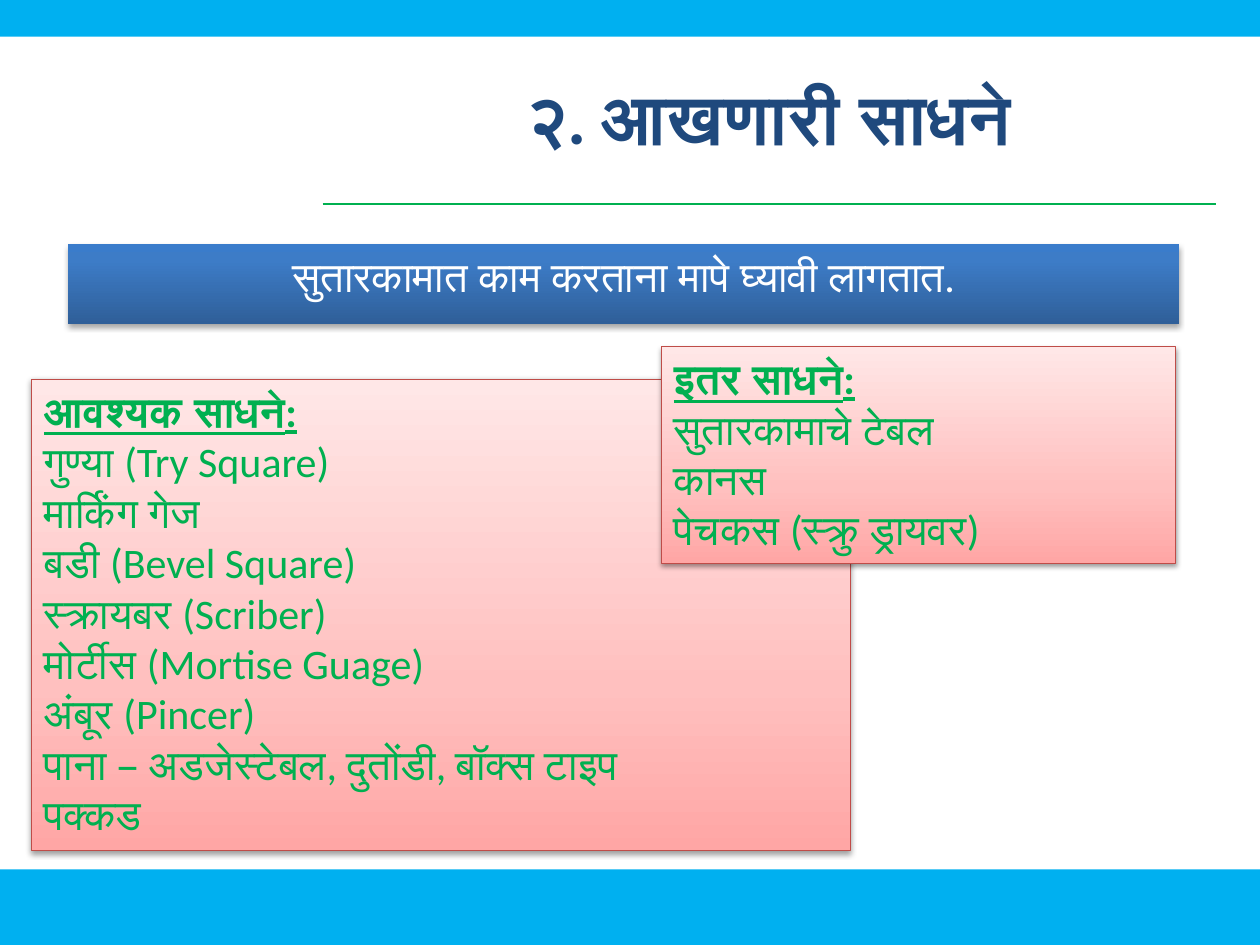
from dataclasses import dataclass

from lxml import etree
from pptx import Presentation
from pptx import util as u
from pptx.dml.color import RGBColor
from pptx.enum import shapes, text
from pptx.oxml import parse_xml
from pptx.oxml.ns import nsdecls, qn


@dataclass(frozen=True)
class Theme:
    font: str = "Calibri"
    title_size: int = 40
    body_size: int = 24
    band: str = "00B0F0"
    green: str = "00B050"
    title: str = "1F497D"
    white: str = "FFFFFF"
    panel_edge: str = "BF4C48"
    blue_stops: tuple = ((0, "2F5F99"), (80, "3D7CC7"), (100, "3A7CCB"))
    pink_stops: tuple = ((0, "FFA6A5"), (35, "FFC0BF"), (100, "FFE7E7"))


@dataclass(frozen=True)
class Box:
    left: float
    top: float
    width: float
    height: float

    def lengths(self) -> list:
        return [u.Inches(v) for v in (self.left, self.top, self.width, self.height)]


@dataclass(frozen=True)
class ToolPanel:
    box: Box
    heading: str
    tools: tuple


THEME = Theme()
BANDS = (Box(0, 6.9, 10, 0.6), Box(0, 0, 10, 0.29))
PANELS = (
    ToolPanel(Box(0.25, 3.01, 6.5, 3.74), "आवश्यक साधने:", (
        "गुण्या (Try Square)",
        "मार्किंग गेज",
        "बडी (Bevel Square)",
        "स्क्रायबर (Scriber)",
        "मोर्टीस (Mortise Guage)",
        "अंबूर (Pincer)",
        "पाना – अडजेस्टेबल, दुतोंडी, बॉक्स टाइप",
        "पक्कड",
    )),
    ToolPanel(Box(5.25, 2.75, 4.08, 1.72), "इतर साधने:", (
        "सुतारकामाचे टेबल",
        "कानस",
        "पेचकस (स्क्रु ड्रायवर)",
    )),
)


def add_rect(slide, box: Box):
    rect = slide.shapes.add_shape(shapes.MSO_SHAPE.RECTANGLE, *box.lengths())
    rect.shadow.inherit = False
    rect.line.fill.background()
    return rect


def add_gradient_rect(slide, box: Box, stops: tuple, shadow_alpha: int, shadow_distance: float):
    """A rectangle shaded from bottom to top, with a soft shadow below it."""
    rect = add_rect(slide, box)
    properties = rect._element.spPr
    stop_xml = "".join(
        f'<a:gs pos="{position * 1000}"><a:srgbClr val="{color}"/></a:gs>'
        for position, color in stops
    )
    properties.find(qn("a:prstGeom")).addnext(parse_xml(
        f'<a:gradFill {nsdecls("a")} rotWithShape="1"><a:gsLst>{stop_xml}</a:gsLst>'
        '<a:lin ang="16200000" scaled="0"/></a:gradFill>'
    ))
    properties.find(qn("a:effectLst")).append(parse_xml(
        f'<a:outerShdw {nsdecls("a")} blurRad="{u.Pt(3.1)}" dist="{u.Pt(shadow_distance)}" '
        'dir="5400000" rotWithShape="0"><a:srgbClr val="000000">'
        f'<a:alpha val="{shadow_alpha * 1000}"/></a:srgbClr></a:outerShdw>'
    ))
    rect.text_frame.word_wrap = True
    rect.text_frame.vertical_anchor = text.MSO_ANCHOR.TOP
    return rect


def add_run(paragraph, words: str, size: int, color: str, bold=False, underline=False) -> None:
    run = paragraph.add_run()
    run.text = words
    font = run.font
    font.name, font.size = THEME.font, u.Pt(size)
    font.bold, font.underline = bold, underline
    font.color.rgb = RGBColor.from_string(color)


def number_paragraph(paragraph) -> None:
    properties = paragraph._p.get_or_add_pPr()
    hang = u.Inches(0.56)
    properties.set("marL", str(hang))
    properties.set("indent", str(-hang))
    etree.SubElement(properties, qn("a:buFont"), typeface="+mj-lt")
    etree.SubElement(properties, qn("a:buAutoNum"), type="hindiNumPeriod")


def add_tool_panel(slide, panel: ToolPanel) -> None:
    rect = add_gradient_rect(slide, panel.box, THEME.pink_stops, 38, 1.6)
    rect.line.color.rgb = RGBColor.from_string(THEME.panel_edge)
    rect.line.width = u.Pt(0.75)
    frame = rect.text_frame
    heading = frame.paragraphs[0]
    heading.alignment = text.PP_ALIGN.LEFT
    add_run(heading, panel.heading, THEME.body_size, THEME.green, bold=True, underline=True)
    for tool in panel.tools:
        item = frame.add_paragraph()
        item.alignment = text.PP_ALIGN.LEFT
        number_paragraph(item)
        add_run(item, tool, THEME.body_size, THEME.green)


def main() -> None:
    deck = Presentation()
    deck.slide_width, deck.slide_height = u.Inches(10), u.Inches(7.5)
    slide = deck.slides.add_slide(deck.slide_layouts[6])

    # Bands at the slide's edges
    for box in BANDS:
        band = add_rect(slide, box)
        band.fill.solid()
        band.fill.fore_color.rgb = RGBColor.from_string(THEME.band)

    # Title and the rule below it
    rule = slide.shapes.add_connector(
        shapes.MSO_CONNECTOR.STRAIGHT,
        u.Inches(2.56), u.Inches(1.62), u.Inches(9.65), u.Inches(1.62),
    )
    rule.line.color.rgb = RGBColor.from_string(THEME.green)
    rule.line.width = u.Pt(0.75)
    etree.SubElement(rule._element.spPr, qn("a:effectLst"))

    title = slide.shapes.add_textbox(*Box(2.56, 0.3, 7.09, 1.25).lengths()).text_frame
    title.word_wrap = True
    title.vertical_anchor = text.MSO_ANCHOR.MIDDLE
    title.paragraphs[0].alignment = text.PP_ALIGN.CENTER
    add_run(title.paragraphs[0], "२. आखणारी साधने", THEME.title_size, THEME.title, bold=True)

    # Statement banner
    banner = add_gradient_rect(slide, Box(0.54, 1.94, 8.82, 0.63), THEME.blue_stops, 35, 1.8)
    statement = banner.text_frame.paragraphs[0]
    statement.alignment = text.PP_ALIGN.CENTER
    add_run(statement, "सुतारकामात काम करताना मापे घ्यावी लागतात.", THEME.body_size, THEME.white)

    # Tool lists
    for panel in PANELS:
        add_tool_panel(slide, panel)

    deck.save("out.pptx")


if __name__ == "__main__":
    main()
